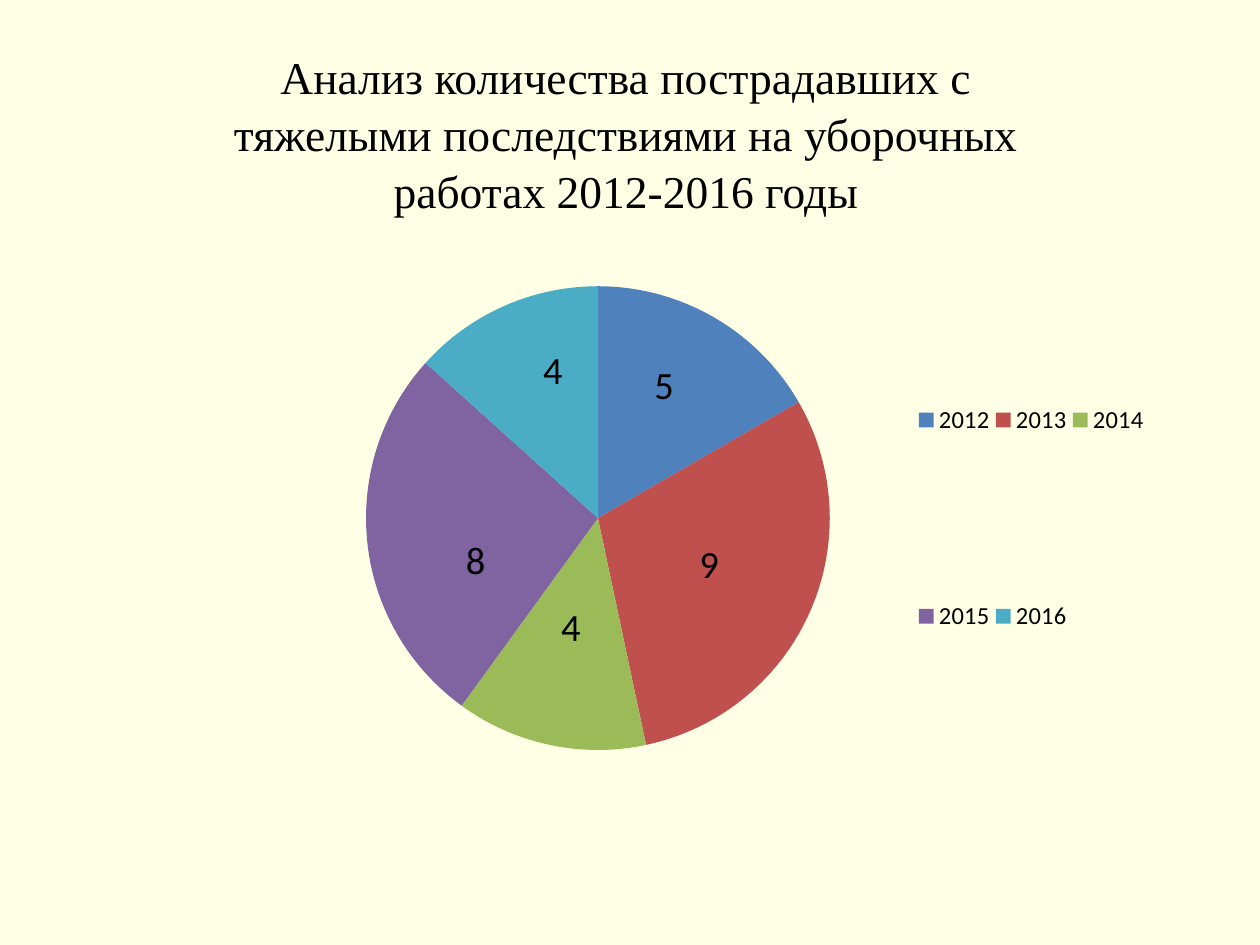
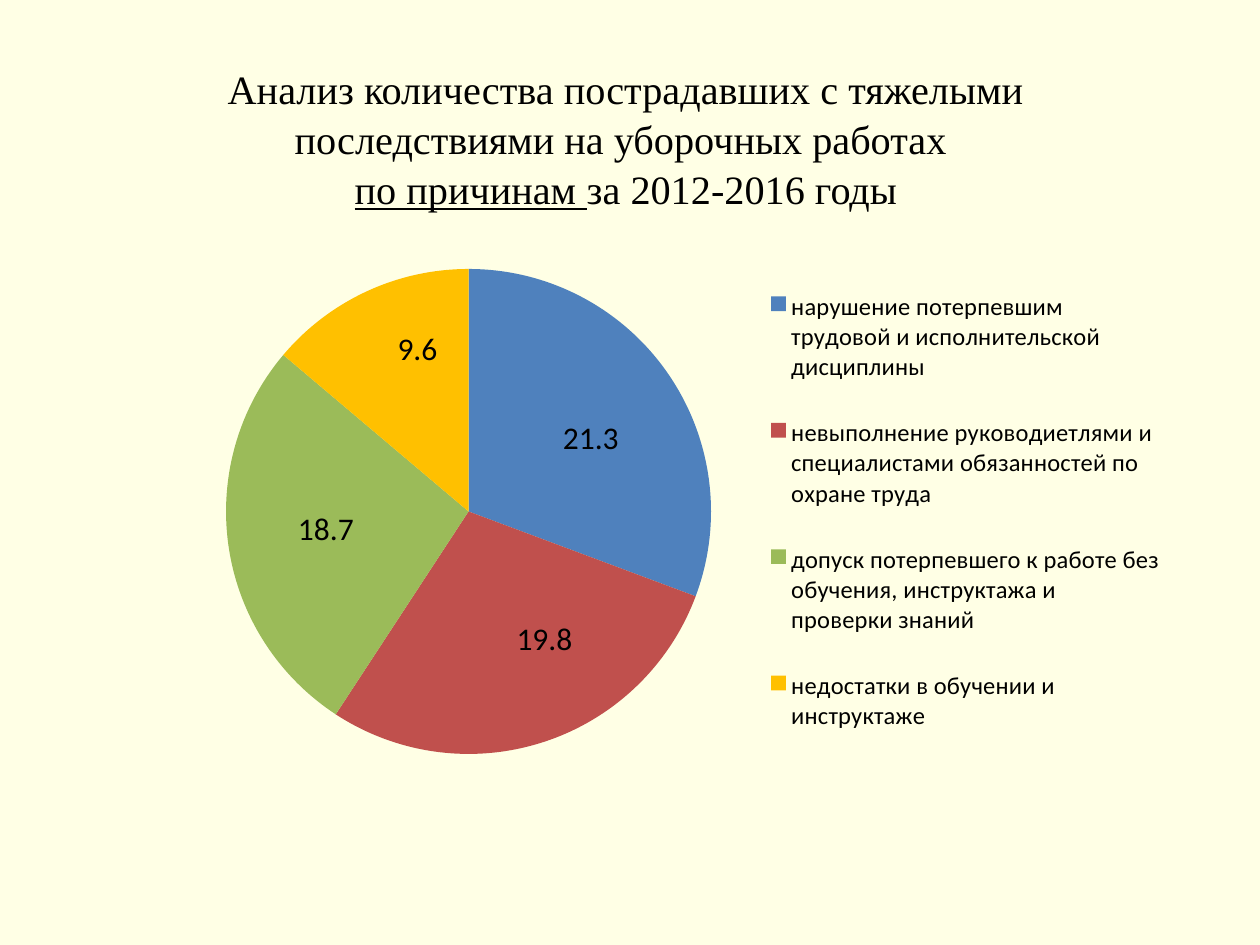
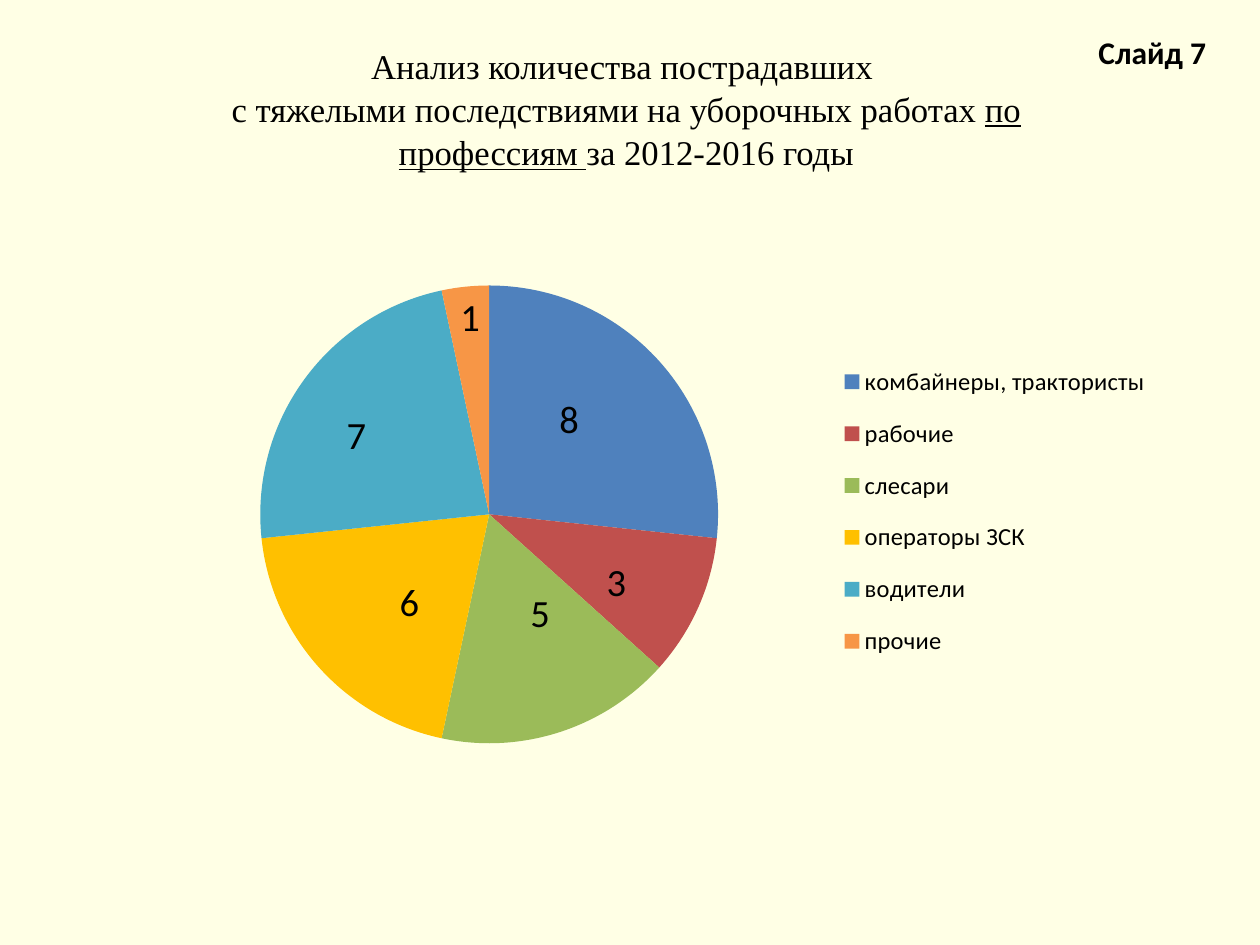
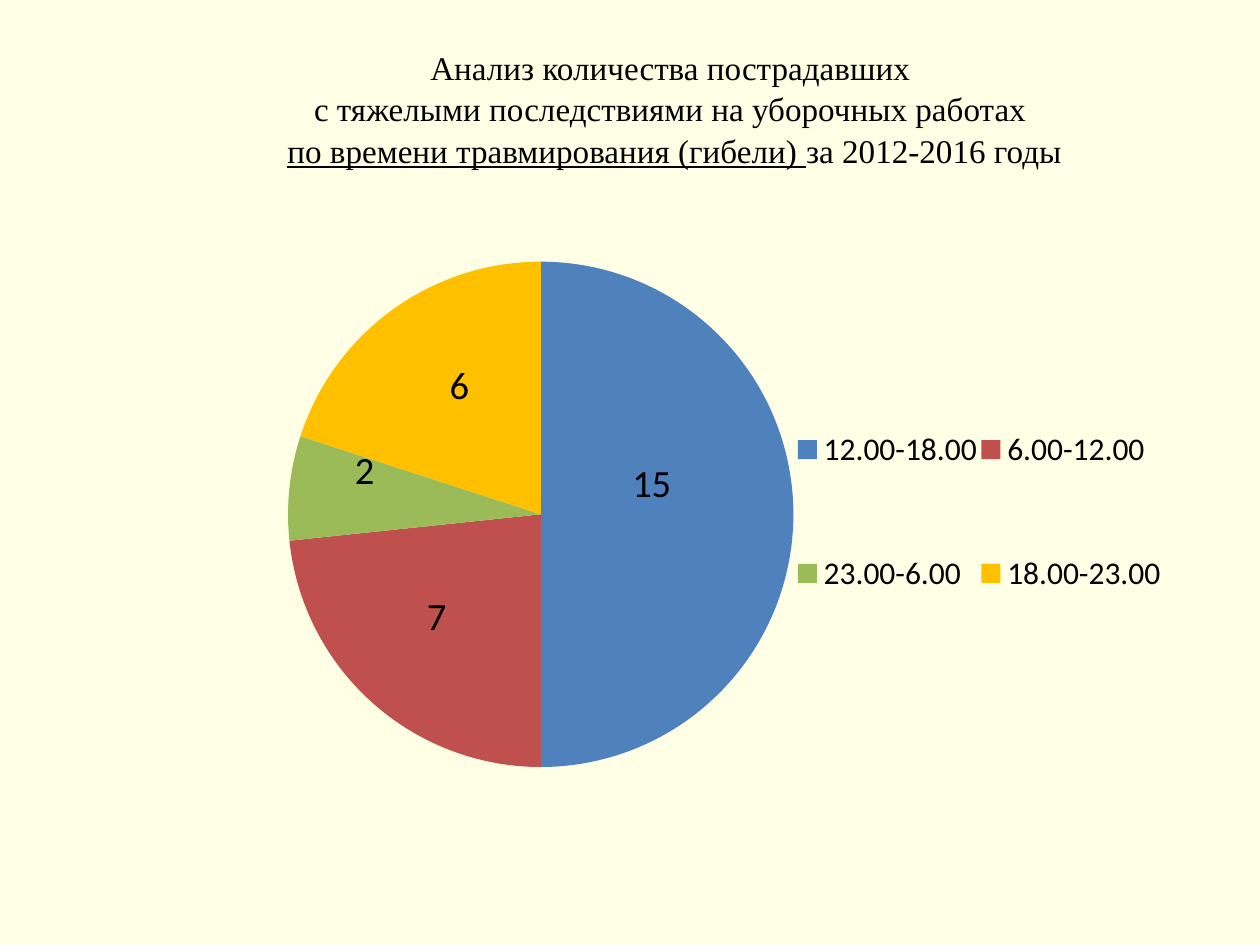
from dataclasses import dataclass
from typing import NamedTuple

import pptx
import pptx.chart.data
import pptx.dml.color
import pptx.enum.chart
import pptx.enum.text
import pptx.oxml
import pptx.oxml.ns
import pptx.util

Pt = pptx.util.Pt
qn = pptx.oxml.ns.qn


@dataclass(frozen=True)
class Theme:
    background: str = "FFFFCC"
    background_alpha: int = 50
    text: str = "000000"
    blue: str = "4F81BD"
    red: str = "C0504D"
    green: str = "9BBB59"
    purple: str = "8064A2"
    teal: str = "4BACC6"
    orange: str = "F79646"
    gold: str = "FFC000"
    title_font: str = "Times New Roman"
    body_font: str = "Calibri"
    title_spacing: float = 1.04
    body_size: float = 18
    legend_size: float = 14
    label_size: float = 22


THEME = Theme()


class Frame(NamedTuple):
    left: float
    top: float
    width: float
    height: float

    def lengths(self) -> list[pptx.util.Length]:
        return [Pt(value) for value in self]


class Span(NamedTuple):
    text: str
    underline: bool = False


class Slice(NamedTuple):
    """One pie sector; the shift moves its label from the sector's centre, in points."""
    name: str
    value: float
    color: str
    shift: tuple[float, float]


@dataclass(frozen=True)
class PieSlide:
    """Plot and legend frames are fractions of the chart frame."""
    title: list[Span]
    title_size: float
    title_frame: Frame
    slices: list[Slice]
    plot: Frame
    legend: Frame
    chart_frame: Frame = Frame(82, 122.4, 589.7, 339.8)
    label_size: float = THEME.label_size
    legend_size: float = THEME.legend_size
    tag: str = ""


PERIOD = Span("за 2012-2016 годы")
TAG_FRAME = Frame(620.6, 15.1, 99.4, 28.8)

SLIDES = [
    PieSlide(
        title=[Span("Анализ количества пострадавших с тяжелыми последствиями "
                    "на уборочных работах 2012-2016 годы")],
        title_size=26,
        title_frame=Frame(101.5, 22.3, 512.6, 106.6),
        chart_frame=Frame(73.4, 129.6, 589.7, 339.8),
        slices=[
            Slice("2012", 5, THEME.blue, (5, -18)),
            Slice("2013", 9, THEME.red, (3, 0)),
            Slice("2014", 4, THEME.green, (-2, -2)),
            Slice("2015", 8, THEME.purple, (-4, 18)),
            Slice("2016", 4, THEME.teal, (1, -23)),
        ],
        plot=Frame(0.23, 0.1, 0.45, 0.78),
        legend=Frame(0.76, 0.02, 0.23, 0.94),
    ),
    PieSlide(
        title=[Span("Анализ количества пострадавших с тяжелыми последствиями "
                    "на уборочных работах \n"),
               Span("по причинам ", True), PERIOD],
        title_size=23,
        title_frame=Frame(101.5, 22.3, 512.6, 112.3),
        slices=[
            Slice("нарушение потерпевшим трудовой и исполнительской дисциплины",
                  21.3, THEME.blue, (13, -2)),
            Slice("невыполнение руководиетлями и специалистами обязанностей "
                  "по охране труда", 19.8, THEME.red, (22, 7)),
            Slice("допуск потерпевшего к работе без обучения, инструктажа "
                  "и проверки знаний", 18.7, THEME.green, (-13, 0)),
            Slice("недостатки в обучении и инструктаже",
                  9.6, THEME.gold, (0, -30)),
        ],
        plot=Frame(0.08, 0.09, 0.47, 0.82),
        legend=Frame(0.61, 0.07, 0.38, 0.86),
        label_size=THEME.body_size,
    ),
    PieSlide(
        title=[Span("Анализ количества пострадавших \n"
                    "с тяжелыми последствиями на уборочных работах "),
               Span("по профессиям ", True), PERIOD],
        title_size=19.8,
        title_frame=Frame(101.5, 22.3, 512.6, 78.5),
        slices=[
            Slice("комбайнеры, трактористы", 8, THEME.blue, (-3, -10)),
            Slice("рабочие", 3, THEME.red, (13, 13)),
            Slice("слесари", 5, THEME.green, (9, -5)),
            Slice("операторы ЗСК", 6, THEME.gold, (3, 7)),
            Slice("водители", 7, THEME.teal, (-23, -6)),
            Slice("прочие", 1, THEME.orange, (-4, -47)),
        ],
        plot=Frame(0.11, 0.12, 0.45, 0.77),
        legend=Frame(0.67, 0.22, 0.31, 0.56),
        tag="Слайд 7",
    ),
    PieSlide(
        title=[Span("Анализ количества пострадавших \n"
                    "с тяжелыми последствиями на уборочных работах \n"),
               Span("по времени травмирования (гибели) ", True), PERIOD],
        title_size=18.9,
        title_frame=Frame(101.5, 22.3, 568, 78.5),
        slices=[
            Slice("12.00-18.00", 15, THEME.blue, (-9, -17)),
            Slice("6.00-12.00", 7, THEME.red, (-11, 5)),
            Slice("23.00-6.00", 2, THEME.green, (-29, -17)),
            Slice("18.00-23.00", 6, THEME.gold, (-4, -15)),
        ],
        plot=Frame(0.14, 0.08, 0.49, 0.85),
        legend=Frame(0.63, 0.22, 0.36, 0.56),
        legend_size=THEME.body_size,
    ),
]


def set_font(font, name: str, size: float) -> None:
    font.name = name
    font.size = Pt(size)
    font.color.rgb = pptx.dml.color.RGBColor.from_string(THEME.text)


def paint_background(page) -> None:
    fill = page.background.fill
    fill.solid()
    fill.fore_color.rgb = pptx.dml.color.RGBColor.from_string(THEME.background)
    color = next(page.background._cSld.iter(qn("a:srgbClr")))
    alpha = pptx.oxml.parse_xml(
        f'<a:alpha {pptx.oxml.ns.nsdecls("a")} val="{THEME.background_alpha * 1000}"/>')
    color.append(alpha)


def manual_layout(**values: object):
    """Build a c:layout element from its child names and values."""
    children = "".join(f'<c:{name} val="{value}"/>' for name, value in values.items())
    return pptx.oxml.parse_xml(
        f'<c:layout {pptx.oxml.ns.nsdecls("c")}><c:manualLayout>{children}'
        "</c:manualLayout></c:layout>")


def frame_layout(frame: Frame, **target: str):
    return manual_layout(**target, xMode="edge", yMode="edge", x=frame.left,
                         y=frame.top, w=frame.width, h=frame.height)


def replace_layout(parent, layout, after: str = "") -> None:
    """Put the layout first in its parent, or right after the named child."""
    for old in parent.findall(qn("c:layout")):
        parent.remove(old)
    if after:
        parent.find(qn(after)).addnext(layout)
    else:
        parent.insert(0, layout)


def write_title(page, slide: PieSlide) -> None:
    title = page.shapes.title
    title.left, title.top, title.width, title.height = slide.title_frame.lengths()
    frame = title.text_frame
    frame.auto_size = pptx.enum.text.MSO_AUTO_SIZE.NONE
    frame.vertical_anchor = pptx.enum.text.MSO_ANCHOR.MIDDLE
    para = frame.paragraphs[0]
    para.alignment = pptx.enum.text.PP_ALIGN.CENTER
    para.line_spacing = THEME.title_spacing
    for span in slide.title:
        for number, line in enumerate(span.text.split("\n")):
            if number:
                para.add_line_break()
            if line:
                run = para.add_run()
                run.text = line
                set_font(run.font, THEME.title_font, slide.title_size)
                run.font.underline = span.underline


def style_slices(series, slide: PieSlide) -> None:
    series.data_labels.show_value = True
    set_font(series.data_labels.font, THEME.body_font, slide.label_size)
    for index, piece in enumerate(slide.slices):
        point = series.points[index]
        point.format.fill.solid()
        point.format.fill.fore_color.rgb = pptx.dml.color.RGBColor.from_string(piece.color)
        label = point.data_label
        set_font(label.font, THEME.body_font, slide.label_size)
        label.position = pptx.enum.chart.XL_LABEL_POSITION.CENTER
    for element, piece in zip(series._element.iter(qn("c:dLbl")), slide.slices):
        across, down = piece.shift
        layout = manual_layout(x=round(across / slide.chart_frame.width, 3),
                               y=round(down / slide.chart_frame.height, 3))
        replace_layout(element, layout, after="c:idx")


def add_pie(page, slide: PieSlide) -> None:
    data = pptx.chart.data.CategoryChartData()
    data.categories = [piece.name for piece in slide.slices]
    data.add_series("Series 1", [piece.value for piece in slide.slices])
    chart = page.shapes.add_chart(pptx.enum.chart.XL_CHART_TYPE.PIE,
                                  *slide.chart_frame.lengths(), data).chart
    chart.has_title = False
    set_font(chart.font, THEME.body_font, THEME.body_size)
    chart.plots[0].vary_by_categories = True
    style_slices(chart.plots[0].series[0], slide)

    chart.has_legend = True
    legend = chart.legend
    legend.position = pptx.enum.chart.XL_LEGEND_POSITION.RIGHT
    legend.include_in_layout = False
    set_font(legend.font, THEME.body_font, slide.legend_size)
    replace_layout(legend._element, frame_layout(slide.legend), after="c:legendPos")
    plot_area = next(chart._chartSpace.iter(qn("c:plotArea")))
    replace_layout(plot_area, frame_layout(slide.plot, layoutTarget="inner"))


def add_tag(page, text: str) -> None:
    box = page.shapes.add_textbox(*TAG_FRAME.lengths())
    box.text_frame.word_wrap = True
    box.text_frame.auto_size = pptx.enum.text.MSO_AUTO_SIZE.SHAPE_TO_FIT_TEXT
    run = box.text_frame.paragraphs[0].add_run()
    run.text = text
    set_font(run.font, THEME.body_font, THEME.body_size)
    run.font.bold = True


def main() -> None:
    deck = pptx.Presentation()
    deck.slide_width, deck.slide_height = Pt(720), Pt(540)
    title_only = deck.slide_layouts.get_by_name("Title Only")
    for slide in SLIDES:
        page = deck.slides.add_slide(title_only)
        paint_background(page)
        write_title(page, slide)
        add_pie(page, slide)
        if slide.tag:
            add_tag(page, slide.tag)
    deck.save("out.pptx")


if __name__ == "__main__":
    main()
